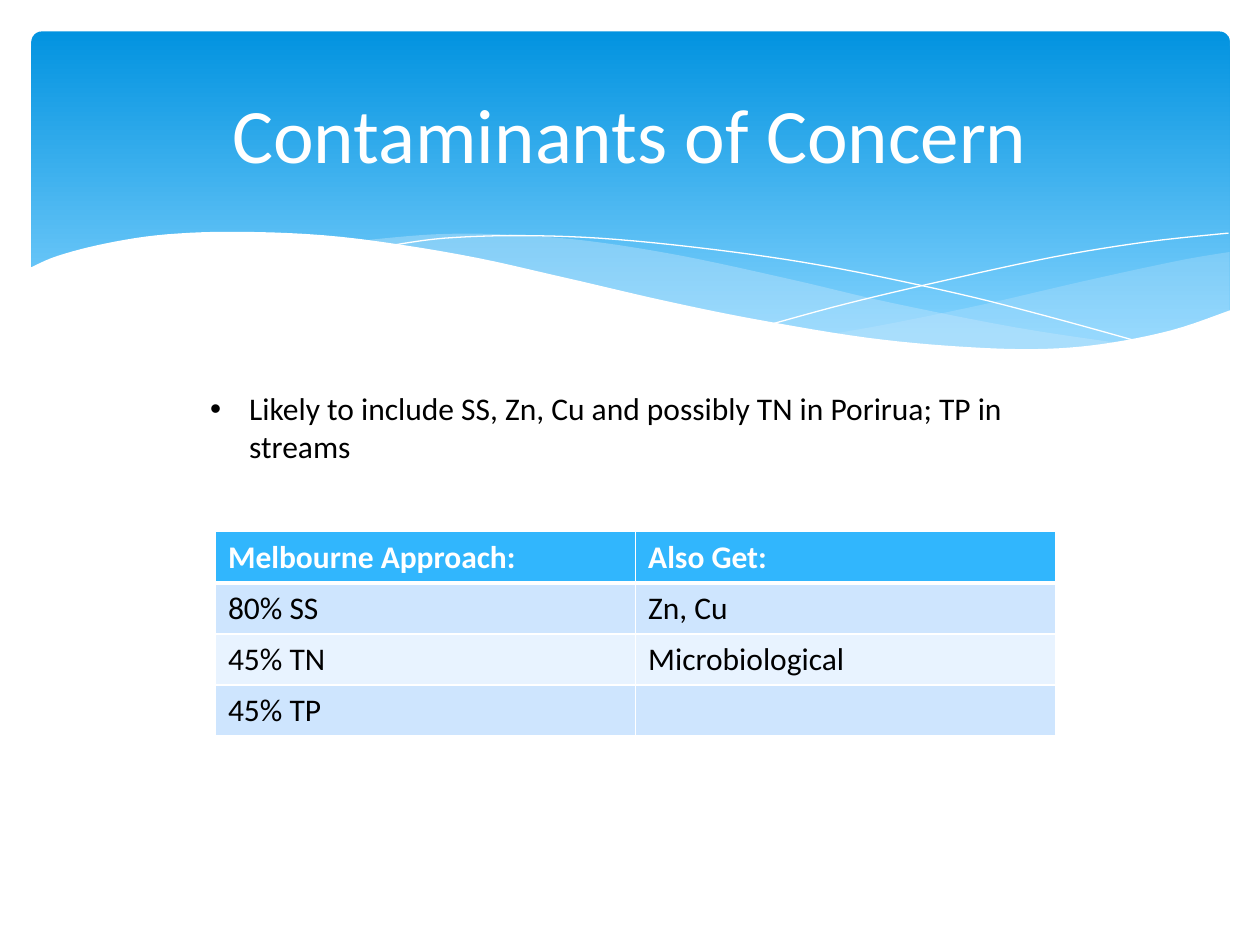
"""Build the slide on contaminants of concern."""
from lxml.etree import SubElement
from pptx import Presentation
from pptx.dml.color import RGBColor
from pptx.enum.shapes import MSO_SHAPE
from pptx.enum.text import MSO_ANCHOR, MSO_AUTO_SIZE, PP_ALIGN
from pptx.oxml.ns import qn
from pptx.util import Inches, Pt

WIDE, HIGH = 10, 7.5
FONT = "Calibri"
WHITE = RGBColor(0xFF, 0xFF, 0xFF)
BLACK = RGBColor(0, 0, 0)
DEEP = RGBColor(0x02, 0x93, 0xE0)
SKY = RGBColor(0x83, 0xD3, 0xFE)
MIST = RGBColor(0xC6, 0xE7, 0xFC)
HEAD = RGBColor(0x31, 0xB6, 0xFD)
BANDS = RGBColor(0xE8, 0xF3, 0xFF), RGBColor(0xCE, 0xE5, 0xFE)

RIGHT_TOP = [(9.76, 2), (9.35, 2.07), (8.61, 2.23), (7.79, 2.42), (7.06, 2.57), (6.61, 2.65)]
RIGHT_LOW = [(6.61, 2.65), (7.05, 2.71), (7.57, 2.76), (8.14, 2.78), (8.72, 2.74),
             (9.21, 2.65), (9.76, 2.47)]
LEFT_TOP = [(8.93, 2.73), (8.07, 2.6), (7.06, 2.4), (6.29, 2.22), (5.41, 2.03), (4.65, 1.91),
            (3.99, 1.86), (3.44, 1.86), (2.86, 1.91)]
LEFT_LOW = [(2.86, 1.91), (3.62, 2.03), (4.49, 2.22), (5.3, 2.4), (6.18, 2.58), (6.95, 2.7),
            (7.61, 2.77), (8.28, 2.78), (8.93, 2.73)]
FALL = [(3.09, 1.95), (3.53, 1.89), (4.16, 1.87), (4.89, 1.9), (5.82, 2), (6.65, 2.13),
        (7.6, 2.33), (8.31, 2.51), (9.07, 2.72)]
RISE = [(6.13, 2.57), (6.72, 2.41), (7.48, 2.23), (8.36, 2.04), (9.1, 1.92), (9.75, 1.85)]
SHORE = [(0.23, 2.13), (0.46, 2.03), (0.85, 1.93), (1.32, 1.86), (1.93, 1.84), (2.71, 1.88),
         (3.65, 2.02), (4.47, 2.2), (5.29, 2.39), (6.03, 2.54), (6.88, 2.68), (7.61, 2.75),
         (8.23, 2.77), (8.75, 2.73), (9.3, 2.62), (9.77, 2.46)]
BASE = [(9.77, 3.29), (0.23, 3.29)]

ROWS = [("Melbourne Approach:", "Also Get:"), ("80% SS", "Zn, Cu"),
        ("45% TN", "Microbiological"), ("45% TP", "")]


def box(left, top, width, height):
    """Turn inches into a frame of lengths."""
    return [Inches(side) for side in (left, top, width, height)]


def blend(p, q, r, s, t):
    """Return the Catmull-Rom value between q and r at the share t."""
    return q + (t * (r - p) + t**2 * (2 * p - 5 * q + 4 * r - s)
                + t**3 * (3 * q - p - 3 * r + s)) / 2


def smooth(knots, steps=6):
    """Return points on a curve through the knots."""
    ends = [knots[0], *knots, knots[-1]]
    points = [knots[0]]
    for quad in zip(ends, ends[1:], ends[2:], ends[3:]):
        for step in range(1, steps + 1):
            points.append(tuple(blend(*axis, step / steps) for axis in zip(*quad)))
    return points


def outline(slide, points, close):
    """Add a freeform through points in inches, without shadow."""
    spots = [(Inches(x), Inches(y)) for x, y in points]
    pen = slide.shapes.build_freeform(*spots[0])
    pen.add_line_segments(spots[1:], close=close)
    shape = pen.convert_to_shape()
    shape.shadow.inherit = False
    return shape


def wave(slide, points, color, share=100):
    """Add a filled wave whose opacity is a share in percent."""
    shape = outline(slide, points, True)
    shape.line.fill.background()
    shape.fill.solid()
    shape.fill.fore_color.rgb = color
    if share < 100:
        tone = shape._element.spPr.find(".//" + qn("a:srgbClr"))
        SubElement(tone, qn("a:alpha"), val=str(share * 1000))


def strand(slide, knots):
    """Add a white hairline curve."""
    shape = outline(slide, smooth(knots), False)
    shape.fill.background()
    shape.line.color.rgb = WHITE
    shape.line.width = Pt(0)


def banner(slide):
    """Add the rounded panel with its blue gradient."""
    panel = slide.shapes.add_shape(MSO_SHAPE.ROUNDED_RECTANGLE, *box(0.25, 0.25, 9.51, 2.7))
    panel.adjustments[0] = 0.03
    panel.shadow.inherit = False
    panel.line.fill.background()
    panel.fill.gradient()
    panel.fill.gradient_angle = 270
    for stop, color, place in zip(panel.fill.gradient_stops, (DEEP, SKY), (0, 0.9)):
        stop.color.rgb = color
        stop.position = place


def style(part, size, color, bold=False):
    """Format all runs of a paragraph."""
    for run in part.runs:
        run.font.name = FONT
        run.font.size = Pt(size)
        run.font.bold = bold
        run.font.color.rgb = color


def heading(slide, text):
    """Fill the title and bring it to the front."""
    title = slide.shapes.title
    title.left, title.top, title.width, title.height = box(0.5, 0.37, WIDE - 1, 1.37)
    frame = title.text_frame
    frame.text = text
    frame.vertical_anchor = MSO_ANCHOR.MIDDLE
    frame.paragraphs[0].alignment = PP_ALIGN.CENTER
    style(frame.paragraphs[0], 44, WHITE)
    slide.shapes._spTree.append(title._element)


def rule(cell, side, width):
    """Draw a white border on one side of a cell."""
    props = cell._tc.get_or_add_tcPr()
    line = props.makeelement(qn("a:" + side), {"w": str(Pt(width))})
    fill = SubElement(line, qn("a:solidFill"))
    SubElement(fill, qn("a:srgbClr"), val=str(WHITE))
    props.insert(0, line)


def grid(slide):
    """Add the table with a header row and banded rows."""
    table = slide.shapes.add_table(len(ROWS), 2, *box(1.71, 4.22, 6.67, 1.62)).table
    for i, row in enumerate(ROWS):
        for j, text in enumerate(row):
            cell = table.cell(i, j)
            cell.fill.solid()
            cell.fill.fore_color.rgb = BANDS[i % 2] if i else HEAD
            cell.text_frame.text = text
            style(cell.text_frame.paragraphs[0], 18, BLACK if i else WHITE, not i)
            rule(cell, "lnB", 1 if i else 3)


def bullet(slide, text):
    """Add a text box with one bulleted paragraph."""
    frame = slide.shapes.add_textbox(*box(1.57, 3.04, 6.8, 0.71)).text_frame
    frame.word_wrap = True
    frame.auto_size = MSO_AUTO_SIZE.SHAPE_TO_FIT_TEXT
    frame.text = text
    part = frame.paragraphs[0]
    part.space_after = Pt(6)
    style(part, 18, BLACK)
    props = part._p.get_or_add_pPr()
    dent = Inches(0.31)
    props.set("marL", str(dent))
    props.set("indent", str(-dent))
    SubElement(props, qn("a:buFont"), typeface="Arial")
    SubElement(props, qn("a:buChar"), char="•")


def main():
    """Build and save the slide."""
    deck = Presentation()
    deck.slide_width, deck.slide_height = Inches(WIDE), Inches(HIGH)
    slide = deck.slides.add_slide(deck.slide_layouts[5])
    banner(slide)
    wave(slide, smooth(RIGHT_TOP) + smooth(RIGHT_LOW), MIST, 29)
    wave(slide, smooth(LEFT_TOP) + smooth(LEFT_LOW), MIST, 40)
    strand(slide, FALL)
    strand(slide, RISE)
    wave(slide, smooth(SHORE) + BASE, WHITE)
    heading(slide, "Contaminants of Concern")
    grid(slide)
    bullet(slide, "Likely to include SS, Zn, Cu and possibly TN in Porirua; TP in streams")
    deck.save("out.pptx")


if __name__ == "__main__":
    main()
